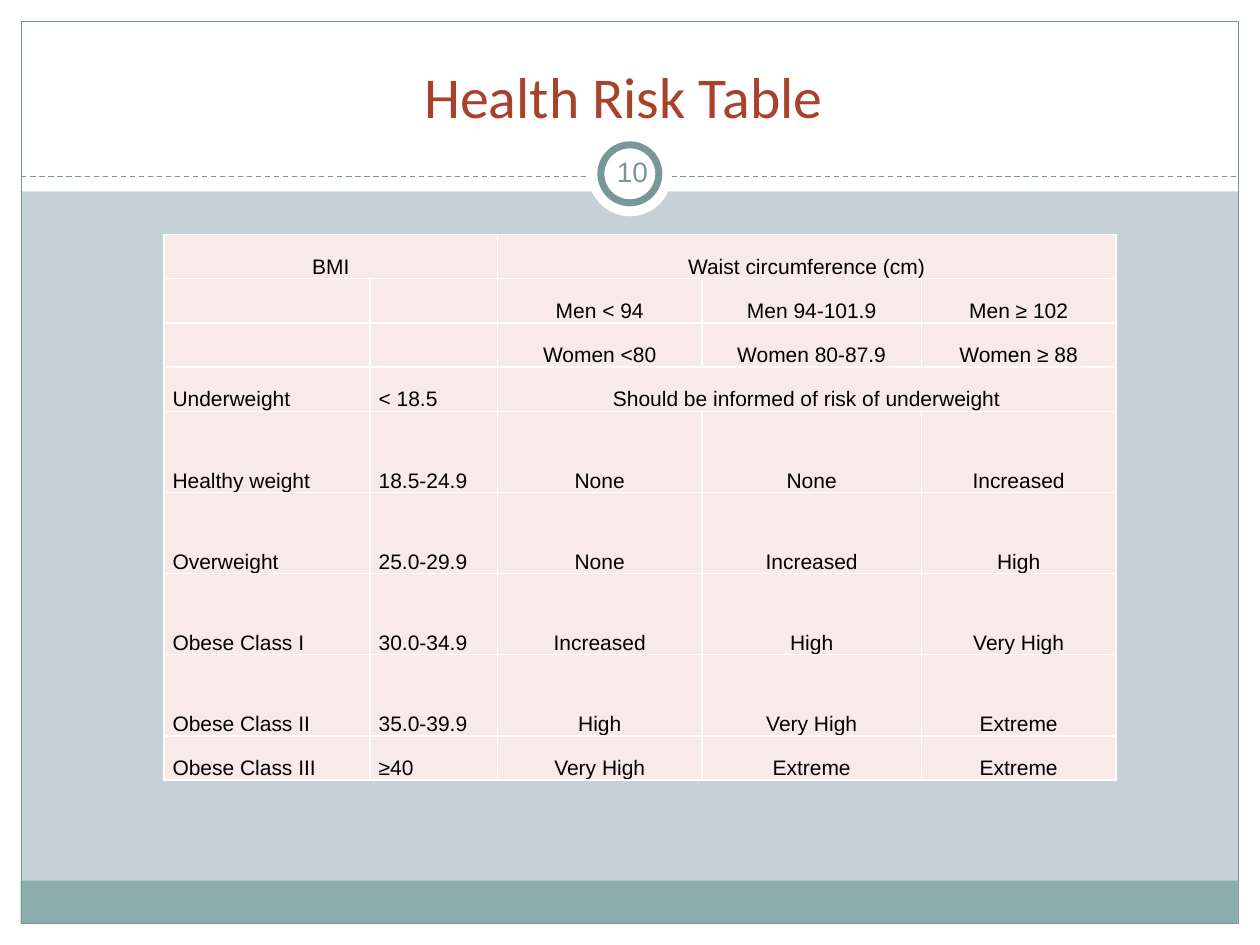
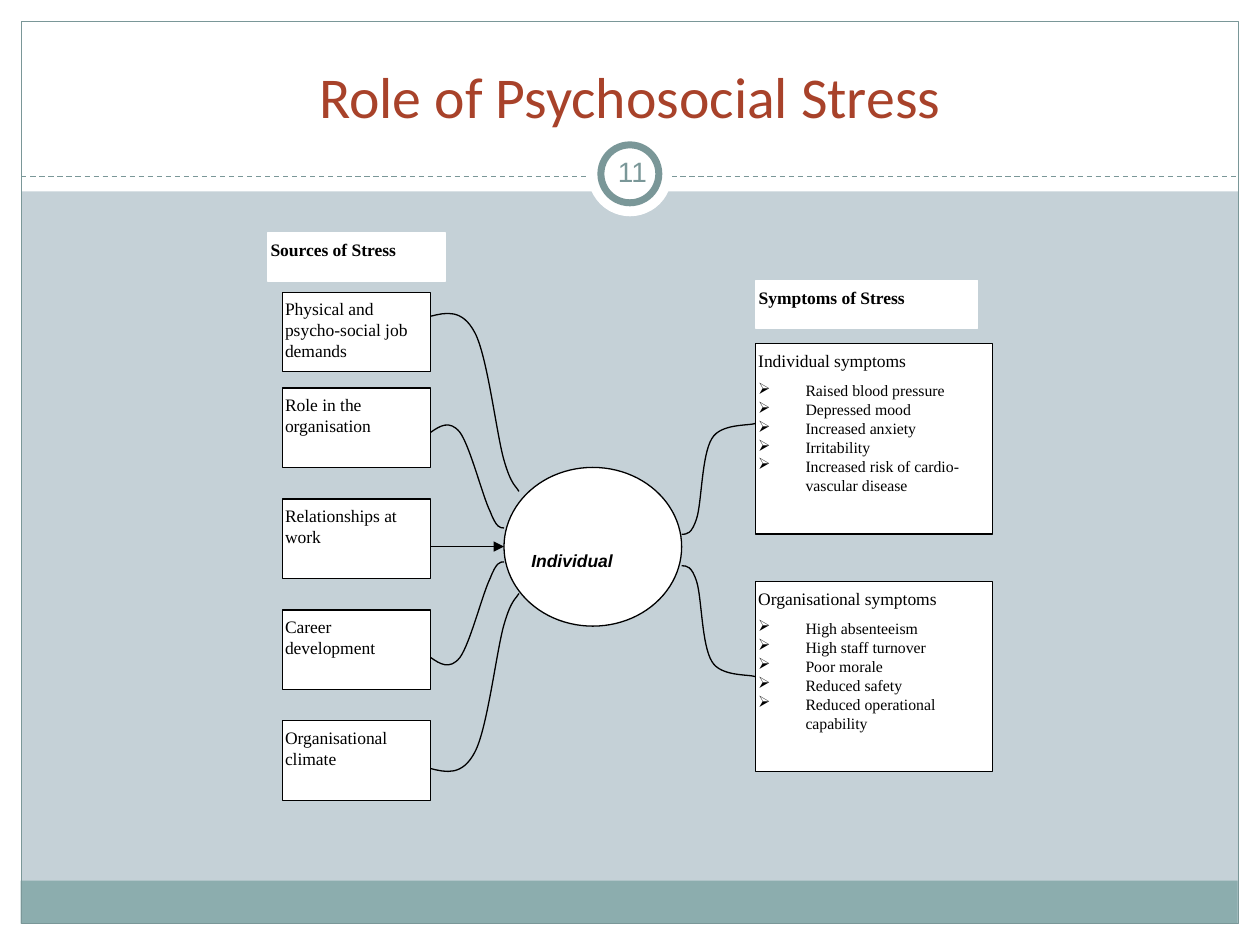
import pptx
import pptx.dml.color
import pptx.enum.dml
import pptx.enum.shapes
import pptx.enum.text
import pptx.oxml
import pptx.oxml.ns
import pptx.util

Pt = pptx.util.Pt
RGBColor = pptx.dml.color.RGBColor
SHAPE = pptx.enum.shapes.MSO_SHAPE
ALIGN = pptx.enum.text.PP_ALIGN
ANCHOR = pptx.enum.text.MSO_ANCHOR
qn = pptx.oxml.ns.qn

WHITE = RGBColor(0xFF, 0xFF, 0xFF)
BLACK = RGBColor(0, 0, 0)
BACKGROUND = RGBColor(0xC5, 0xD1, 0xD7)
TEAL = RGBColor(0x7A, 0x97, 0x98)
BAND = RGBColor(0x8C, 0xAD, 0xAE)
RUST = RGBColor(0xA8, 0x42, 0x2A)
PINK = RGBColor(0xF7, 0xEA, 0xE8)

FIRST_NUMBER = 10
TITLES = ["Health Risk Table ", "Role of Psychosocial Stress"]

FRAME = [
    (SHAPE.RECTANGLE, (0, 527.8, 720, 12.2), WHITE, None, 0),
    (SHAPE.RECTANGLE, (0, 0, 720, 109.4), WHITE, None, 0),
    (SHAPE.RECTANGLE, (0, 0, 12.2, 540), WHITE, None, 0),
    (SHAPE.RECTANGLE, (707.8, 0, 12.2, 540), WHITE, None, 0),
    (SHAPE.RECTANGLE, (11.8, 503.3, 695.5, 24.5), BAND, None, 0),
    (SHAPE.RECTANGLE, (12.2, 12.2, 695.6, 515.6), None, TEAL, 0.75),
    "divider",
    (SHAPE.OVAL, (336, 75.6, 48, 48), WHITE, None, 0),
    (SHAPE.OVAL, (343.4, 82.8, 33.1, 33.1), WHITE, TEAL, 4),
]

RISK_ROWS = [
    ["BMI", "", "Waist circumference (cm)", "", ""],
    ["", "", "Men < 94", "Men 94-101.9", "Men ≥ 102"],
    ["", "", "Women <80", "Women 80-87.9", "Women ≥ 88"],
    ["Underweight", "< 18.5", "Should be informed of risk of underweight", "", ""],
    ["Healthy weight", "18.5-24.9", "None", "None", "Increased"],
    ["Overweight", "25.0-29.9", "None", "Increased", "High"],
    ["Obese Class I", "30.0-34.9", "Increased", "High", "Very High"],
    ["Obese Class II", "35.0-39.9", "High", "Very High", "Extreme"],
    ["Obese Class III", "≥40", "Very High", "Extreme", "Extreme"],
]
RISK_MERGES = [(0, 0, 1), (0, 2, 4), (3, 2, 4)]
COLUMN_WIDTHS = [117.8, 73, 116.7, 125.6, 111]
LOW_ROW, TALL_ROW = 25.3, 46.35
TALL_ROWS = range(4, 8)

SOURCES = [
    "Physical and psycho-social job demands",
    "Role in the organisation",
    "Relationships at work",
    "Career development",
    "Organisational climate",
]
SOURCE_TOPS = [167] + [221.8 + 63.36 * step for step in range(4)]
HEADINGS = [
    ("Sources of Stress", (153, 133.2, 101.5, 27.4)),
    ("Symptoms of Stress", (432, 160.2, 126.7, 27.4)),
]
SYMPTOMS = [
    ("Individual symptoms", 196.4, [
        "Raised blood pressure", "Depressed mood", "Increased anxiety",
        "Irritability", "Increased risk of cardio-vascular disease"]),
    ("Organisational symptoms", 332.3, [
        "High absenteeism", "High staff turnover", "Poor morale",
        "Reduced safety", "Reduced operational capability"]),
]
CURVES = [
    (309.95, [(246.2, 439.2), (254.9, 441.4), (264.2, 443.5), (271.4, 429.8),
              (278.6, 416.2), (283.7, 372.2), (288, 357.1),
              (292.3, 342), (295.2, 342), (296.6, 339.1)]),
    (311.4, [(246.2, 375.8), (251.3, 379.4), (257, 383), (262.8, 375.8),
             (268.6, 367.9), (275.8, 339.1), (280.1, 330.5),
             (283.7, 321.1), (285.8, 321.1), (288, 321.1)]),
    (314.3, [(389.5, 305.3), (392.4, 305.3), (395.3, 305.3), (398.2, 295.9),
             (401, 286.6), (401, 259.9), (406.8, 250.6),
             (411.8, 241.9), (427.7, 243.4), (432, 241.9)]),
]


def apply(target, **formats):
    for name, value in formats.items():
        setattr(target, name, value)


def box(*lengths):
    return [Pt(length) for length in lengths]


def append_element(parent, tag, **attributes):
    parent.append(parent.makeelement(qn(tag), attributes))


def paint(shape, fill, line, width):
    shape.shadow.inherit = False
    if fill is None:
        shape.fill.background()
    else:
        shape.fill.solid()
        shape.fill.fore_color.rgb = fill
    if line is None:
        shape.line.fill.background()
    else:
        shape.line.color.rgb = line
        shape.line.width = Pt(width)


def add_shape(slide, kind, place, fill=WHITE, line=BLACK, width=0.75):
    shape = slide.shapes.add_shape(kind, *box(*place))
    paint(shape, fill, line, width)
    return shape


def add_line(slide, start, end, color):
    connector = slide.shapes.add_connector(
        pptx.enum.shapes.MSO_CONNECTOR.STRAIGHT, *box(*start, *end))
    connector.line.color.rgb = color
    connector.line.width = Pt(0.75)
    append_element(connector.element.spPr, "a:effectLst")
    return connector


def set_frame(shape, margins, anchor=ANCHOR.TOP):
    left, top, right, bottom = box(*margins)
    apply(shape.text_frame, margin_left=left, margin_top=top, margin_right=right,
          margin_bottom=bottom, vertical_anchor=anchor, word_wrap=True,
          auto_size=pptx.enum.text.MSO_AUTO_SIZE.NONE)


def write(paragraph, text, size, font="Times New Roman", color=BLACK,
          align=ALIGN.LEFT, **formats):
    run = paragraph.add_run()
    run.text = text
    apply(run.font, name=font, size=Pt(size), **formats)
    run.font.color.rgb = color
    paragraph.alignment = align


def build_layout(layout, slide):
    layout.background.fill.solid()
    layout.background.fill.fore_color.rgb = BACKGROUND
    for placeholder in list(layout.placeholders):
        if placeholder.placeholder_format.idx:
            placeholder.element.getparent().remove(placeholder.element)
    for part in FRAME:
        if part == "divider":
            shape = add_line(slide, (12.2, 100.8), (707.8, 100.8), TEAL)
            shape.line.dash_style = pptx.enum.dml.MSO_LINE.DASH
        else:
            shape = add_shape(slide, *part)
        layout.shapes.element.append(shape.element)


def add_title_and_number(slide, title, number):
    left, top, width, height = box(24, 18, 672, 59.8)
    apply(slide.shapes.title, left=left, top=top, width=width, height=height)
    set_frame(slide.shapes.title, (7.2, 3.6, 7.2, 3.6), ANCHOR.BOTTOM)
    write(slide.shapes.title.text_frame.paragraphs[0], title, 33, "Calibri", RUST, ALIGN.CENTER)
    badge = slide.shapes.add_textbox(*box(343.4, 80.6, 36, 34.6))
    set_frame(badge, (3.6, 3.6, 3.6, 3.6), ANCHOR.MIDDLE)
    write(badge.text_frame.paragraphs[0], str(number), 16, "Arial", TEAL, ALIGN.CENTER)


def format_cell(cell):
    apply(cell, margin_left=Pt(5), margin_right=Pt(5), margin_top=0, margin_bottom=0,
          vertical_anchor=ANCHOR.BOTTOM)
    cell.fill.solid()
    cell.fill.fore_color.rgb = PINK
    properties = cell._tc.get_or_add_tcPr()
    for position, side in enumerate("LRTB"):
        properties.insert(position, pptx.oxml.parse_xml(
            f'<a:ln{side} xmlns:a="http://schemas.openxmlformats.org/drawingml/2006/main" '
            f'w="{Pt(1)}"><a:solidFill><a:srgbClr val="{WHITE}"/></a:solidFill></a:ln{side}>'))


def build_risk_table(slide):
    heights = [TALL_ROW if row in TALL_ROWS else LOW_ROW for row in range(len(RISK_ROWS))]
    table = slide.shapes.add_table(
        len(RISK_ROWS), len(COLUMN_WIDTHS),
        *box(93.6, 133.9, sum(COLUMN_WIDTHS), sum(heights))).table
    apply(table, first_row=False, horz_banding=False)
    for column, width in zip(table.columns, COLUMN_WIDTHS):
        column.width = Pt(width)
    for row, height in zip(table.rows, heights):
        row.height = Pt(height)
    for row, texts in enumerate(RISK_ROWS):
        for column, text in enumerate(texts):
            cell = table.cell(row, column)
            format_cell(cell)
            if text:
                align = ALIGN.CENTER if row == 0 or column > 1 else ALIGN.LEFT
                write(cell.text_frame.paragraphs[0], text, 12, "Arial", align=align)
    for row, first, last in RISK_MERGES:
        table.cell(row, first).merge(table.cell(row, last))


def add_curve(slide, points):
    start, *others = [box(*point) for point in points]
    builder = slide.shapes.build_freeform(*start)
    builder.add_line_segments(others, close=False)
    curve = builder.convert_to_shape()
    paint(curve, None, BLACK, 0.75)
    outline = next(curve.element.iter(qn("a:path")))
    segments = outline.findall(qn("a:lnTo"))
    for first in range(0, len(segments), 3):
        bezier = outline.makeelement(qn("a:cubicBezTo"), {})
        outline.append(bezier)
        for segment in segments[first:first + 3]:
            bezier.append(segment[0])
            outline.remove(segment)


def add_text_box(slide, text, place, line=BLACK, **formats):
    shape = add_shape(slide, SHAPE.RECTANGLE, place, line=line)
    set_frame(shape, (1.6, 3.6, 7.2, 3.6))
    write(shape.text_frame.paragraphs[0], text, 10, **formats)
    return shape


def add_bullet(text_frame, text):
    paragraph = text_frame.add_paragraph()
    write(paragraph, text, 9)
    properties = paragraph._p.get_or_add_pPr()
    properties.set("marL", str(Pt(27)))
    properties.set("indent", str(Pt(-27)))
    append_element(properties, "a:buFont", typeface="Wingdings", pitchFamily="2", charset="2")
    append_element(properties, "a:buChar", char="Ø")


def build_stress_diagram(slide):
    for text, top in zip(SOURCES, SOURCE_TOPS):
        add_text_box(slide, text, (161.3, top, 84.6, 45.4))
    add_shape(slide, SHAPE.OVAL, (288, 267.1, 101.5, 90.7))
    label = add_text_box(slide, "Individual", (296.6, 293.8, 84.2, 27.4), WHITE,
                         font="Arial", bold=True, italic=True)
    set_frame(label, (7.2, 3.6, 7.2, 0.7))
    label.text_frame.paragraphs[0].line_spacing = 2.4
    for axis, points in CURVES:
        add_curve(slide, points)
        add_curve(slide, [(x, 2 * axis - y) for x, y in points])
    arrow = add_line(slide, (246.2, 312.3), (288, 312.3), BLACK)
    append_element(arrow.line._get_or_add_ln(), "a:tailEnd", type="triangle")
    for text, place in HEADINGS:
        add_text_box(slide, text, place, WHITE, bold=True)
    for heading, top, symptoms in SYMPTOMS:
        shape = add_text_box(slide, heading, (431.7, top, 135.4, 108.7))
        shape.text_frame.paragraphs[0].space_after = Pt(5.75)
        for symptom in symptoms:
            add_bullet(shape.text_frame, symptom)


def main():
    presentation = pptx.Presentation()
    apply(presentation, slide_width=Pt(720), slide_height=Pt(540))
    layout = presentation.slide_layouts.get_by_name("Title Only")
    slides = [presentation.slides.add_slide(layout) for title in TITLES]
    build_layout(layout, slides[0])
    for number, (slide, title) in enumerate(zip(slides, TITLES), FIRST_NUMBER):
        add_title_and_number(slide, title, number)
    build_risk_table(slides[0])
    build_stress_diagram(slides[1])
    presentation.save("out.pptx")


if __name__ == "__main__":
    main()
